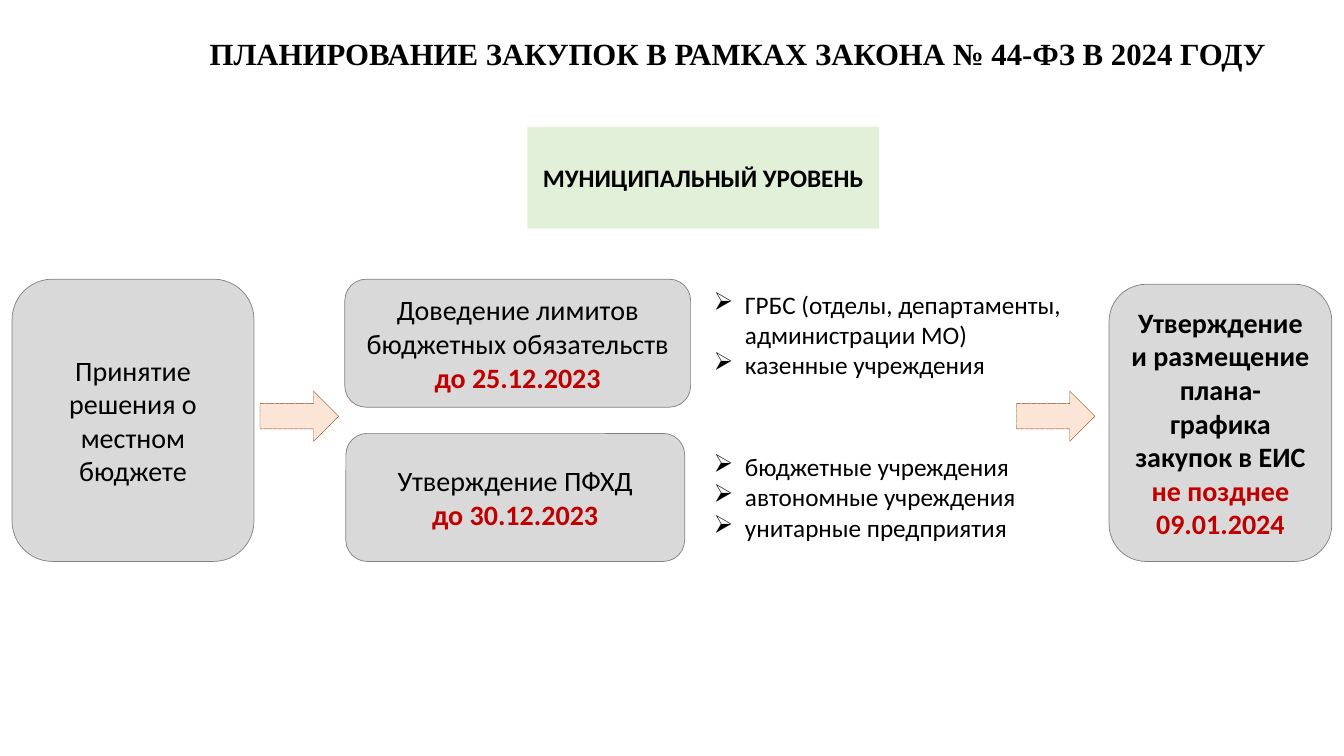
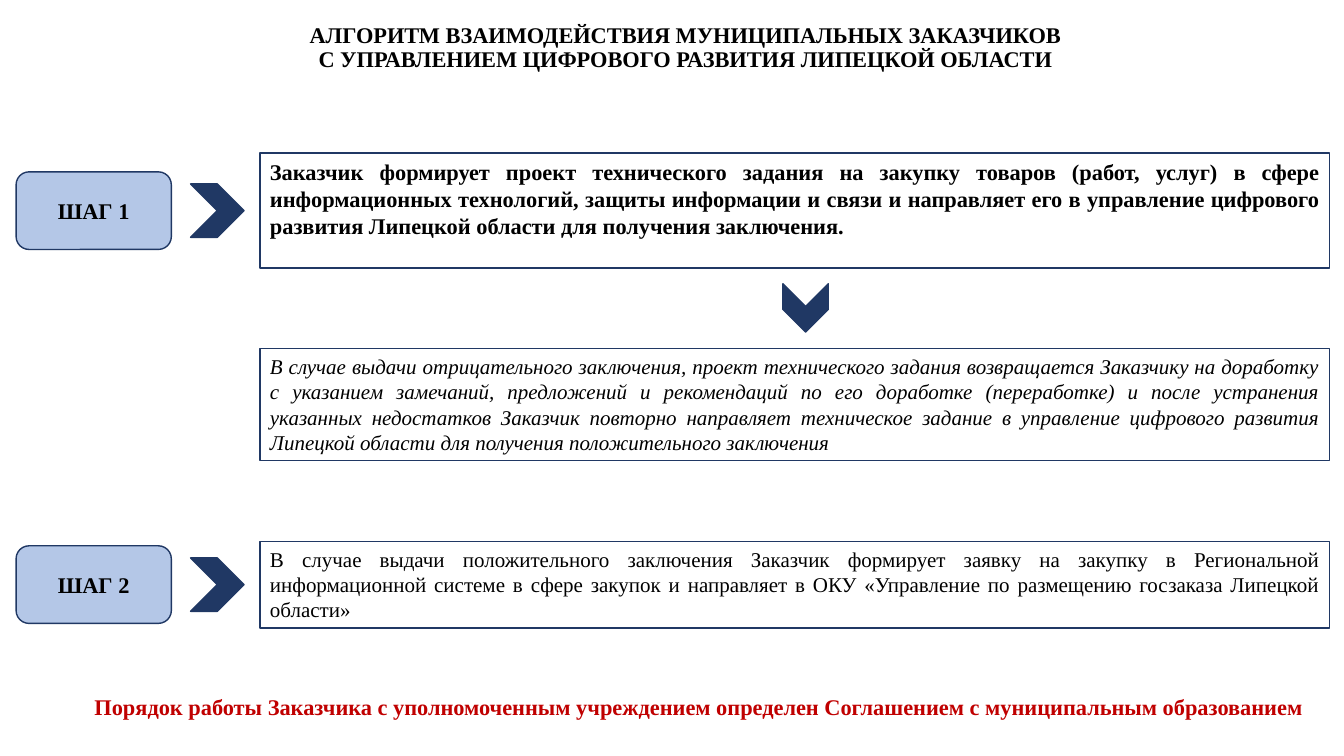
from lxml import etree
from pptx import Presentation
from pptx.dml.color import RGBColor
from pptx.enum.dml import MSO_LINE
from pptx.enum.shapes import MSO_SHAPE
from pptx.enum.text import MSO_ANCHOR, PP_ALIGN
from pptx.oxml.ns import qn
from pptx.util import Emu, Inches, Pt

RECTANGLE = MSO_SHAPE.RECTANGLE
ROUNDED = MSO_SHAPE.ROUNDED_RECTANGLE
ARROW = MSO_SHAPE.RIGHT_ARROW
CHEVRON = MSO_SHAPE.CHEVRON
DASHED = MSO_LINE.SQUARE_DOT
TOP, MIDDLE = MSO_ANCHOR.TOP, MSO_ANCHOR.MIDDLE
LEFT, CENTER, JUSTIFY = PP_ALIGN.LEFT, PP_ALIGN.CENTER, PP_ALIGN.JUSTIFY

SLIDE_WIDTH, SLIDE_HEIGHT = 13.33, 7.5
SANS, SERIF = "Calibri", "Times New Roman"
BLACK, RED, NAVY = "000000", "C00000", "203864"
GREY, GREY_LINE = "D9D9D9", "808080"
PEACH, BROWN = "FBE5D6", "843C0B"
GREEN, BLUE = "E2F0D9", "B4C7E7"


def color(value):
    """Turn a hex string into a colour."""
    return RGBColor.from_string(value)


def within(area, left, top, width, height):
    """Return the box at the given percentages of an area."""
    x, y, w, h = area
    return x + w * left / 100, y + h * top / 100, w * width / 100, h * height / 100


def add_bullet(paragraph, character):
    """Give a paragraph a hanging bullet."""
    properties = paragraph._p.get_or_add_pPr()
    indent = Emu(Inches(0.31))
    properties.set("marL", str(indent))
    properties.set("indent", str(-indent))
    etree.SubElement(properties, qn("a:buChar")).set("char", character)


def write(shape, *lines, size=18, font=SANS, fill=BLACK, bold=False, italic=False,
          align=CENTER, anchor=MIDDLE, spacing=None, bullet=None):
    """Fill a shape with paragraphs; a line may be a (text, overrides) pair."""
    frame = shape.text_frame
    frame.word_wrap = True
    frame.vertical_anchor = anchor
    for index, line in enumerate(lines):
        text, changes = (line, {}) if isinstance(line, str) else line
        paragraph = frame.add_paragraph() if index else frame.paragraphs[0]
        paragraph.alignment = align
        if spacing:
            paragraph.line_spacing = spacing
        if bullet:
            add_bullet(paragraph, bullet)
        run = paragraph.add_run()
        run.text = text
        run.font.size, run.font.name = Pt(size), font
        run.font.bold, run.font.italic = changes.get("bold", bold), italic
        run.font.color.rgb = color(changes.get("fill", fill))


def add_shape(slide, kind, box, fill=None, line=None, weight=1, dash=None):
    """Add a flat preset shape."""
    shape = slide.shapes.add_shape(kind, *map(Inches, box))
    shape.shadow.inherit = False
    if fill:
        shape.fill.solid()
        shape.fill.fore_color.rgb = color(fill)
    else:
        shape.fill.background()
    if line:
        shape.line.color.rgb = color(line)
        shape.line.width = Pt(weight)
        if dash:
            shape.line.dash_style = dash
    else:
        shape.line.fill.background()
    return shape


def add_text(slide, box, *lines, **style):
    """Add a text box."""
    write(slide.shapes.add_textbox(*map(Inches, box)), *lines, **style)


def add_title(slide, box, *lines, **style):
    """Add the bold serif heading of a slide."""
    add_text(slide, box, *lines, font=SERIF, bold=True, spacing=0.9, **style)


def add_stage(slide, box, *lines, **style):
    """Add a grey rounded stage of the planning process."""
    stage = add_shape(slide, ROUNDED, box, GREY, GREY_LINE, 0.5)
    write(stage, *lines, size=20, **style)


def add_planning_flow(slide, area):
    """Lay out the planning stages, their participants and the arrows."""
    deadline = {"fill": RED, "bold": True}
    stages = [
        ((0, 0, 18.33, 100), ["Принятие решения о местном бюджете"], False),
        ((25.21, 0, 26.2, 45.36),
         ["Доведение лимитов бюджетных обязательств", ("до 25.12.2023", deadline)], False),
        ((25.29, 54.64, 25.67, 45.36),
         ["Утверждение ПФХД", ("до 30.12.2023", deadline)], False),
        ((83.12, 1.79, 16.88, 98.21),
         ["Утверждение и размещение плана-графика закупок в ЕИС",
          ("не позднее 09.01.2024", deadline)], True),
    ]
    for share, lines, bold in stages:
        add_stage(slide, within(area, *share), *lines, bold=bold)
    participants = [
        (1.79, ["ГРБС (отделы, департаменты, администрации МО)", "казенные учреждения"]),
        (59.29, ["бюджетные учреждения", "автономные учреждения", "унитарные предприятия"]),
    ]
    for top, lines in participants:
        add_text(slide, within(area, 52.41, top, 28.57, 36.07), *lines,
                 align=LEFT, anchor=TOP, bullet="➢")
    for left in (18.79, 76.09):
        add_shape(slide, ARROW, within(area, left, 39.64, 5.96, 17.86),
                  PEACH, BROWN, 0.25, DASHED)


def add_statement(slide, area, text, **style):
    """Add the outlined text in the wide column of a row."""
    statement = add_shape(slide, RECTANGLE, within(area, 18.57, 0, 81.43, 100), line=NAVY)
    write(statement, text, font=SERIF, align=JUSTIFY, anchor=TOP, **style)


def add_step(slide, area, label, text, **style):
    """Add a row with a step badge, a chevron and a statement."""
    height = area[3]
    badge_share, chevron_share = 77 / height, 53 / height
    badge = add_shape(slide, ROUNDED,
                      within(area, 0, 50 - badge_share / 2, 11.82, badge_share), BLUE, NAVY)
    write(badge, label, size=16, font=SERIF, bold=True)
    add_shape(slide, CHEVRON,
              within(area, 13.28, 50 - chevron_share / 2, 4.07, chevron_share), NAVY, NAVY)
    add_statement(slide, area, text, **style)


def build_planning_slide(slide):
    """Build the slide on procurement planning."""
    add_title(slide, (1.3, 0.23, 12.03, 0.64),
              "ПЛАНИРОВАНИЕ ЗАКУПОК В РАМКАХ ЗАКОНА № 44-ФЗ В 2024 ГОДУ", size=22)
    level = add_shape(slide, RECTANGLE, (5.23, 1.26, 3.49, 1.01), GREEN)
    write(level, "МУНИЦИПАЛЬНЫЙ УРОВЕНЬ", bold=True)
    add_planning_flow(slide, (0.12, 2.77, 13.09, 2.8))


def build_algorithm_slide(slide):
    """Build the slide on the steps of cooperation."""
    left, width = 0.16, 13.03
    add_title(slide, (0.46, 0.19, 12.68, 0.53),
              "АЛГОРИТМ ВЗАИМОДЕЙСТВИЯ МУНИЦИПАЛЬНЫХ ЗАКАЗЧИКОВ",
              "С УПРАВЛЕНИЕМ ЦИФРОВОГО РАЗВИТИЯ ЛИПЕЦКОЙ ОБЛАСТИ", size=16, anchor=TOP)
    add_step(slide, (left, 1.52, width, 1.14), "ШАГ 1",
             "Заказчик формирует проект технического задания на закупку товаров (работ, услуг) "
             "в сфере информационных технологий, защиты информации и связи и направляет его "
             "в управление цифрового развития Липецкой области для получения заключения.",
             size=16, bold=True)
    chevron = add_shape(slide, CHEVRON, (7.75, 2.83, 0.48, 0.45), NAVY, NAVY)
    chevron.rotation = 90
    add_statement(slide, (left, 3.46, width, 1.11),
                  "В случае выдачи отрицательного заключения, проект технического задания "
                  "возвращается Заказчику на доработку с указанием замечаний, предложений и "
                  "рекомендаций по его доработке (переработке) и после устранения указанных "
                  "недостатков Заказчик повторно направляет техническое задание в управление "
                  "цифрового развития Липецкой области для получения положительного заключения",
                  size=15, italic=True)
    add_step(slide, (left, 5.37, width, 0.86), "ШАГ 2",
             "В случае выдачи положительного заключения Заказчик формирует заявку на закупку "
             "в Региональной информационной системе в сфере закупок и направляет в ОКУ "
             "«Управление по размещению госзаказа Липецкой области»", size=15)
    add_text(slide, (0.53, 6.83, 12.8, 0.37),
             "Порядок работы Заказчика с уполномоченным учреждением определен Соглашением "
             "с муниципальным образованием",
             size=16, font=SERIF, fill=RED, bold=True, anchor=TOP)


def main():
    """Build and save the presentation."""
    presentation = Presentation()
    presentation.slide_width = Inches(SLIDE_WIDTH)
    presentation.slide_height = Inches(SLIDE_HEIGHT)
    blank = presentation.slide_layouts[6]
    for build in (build_planning_slide, build_algorithm_slide):
        build(presentation.slides.add_slide(blank))
    presentation.save("out.pptx")


if __name__ == "__main__":
    main()
